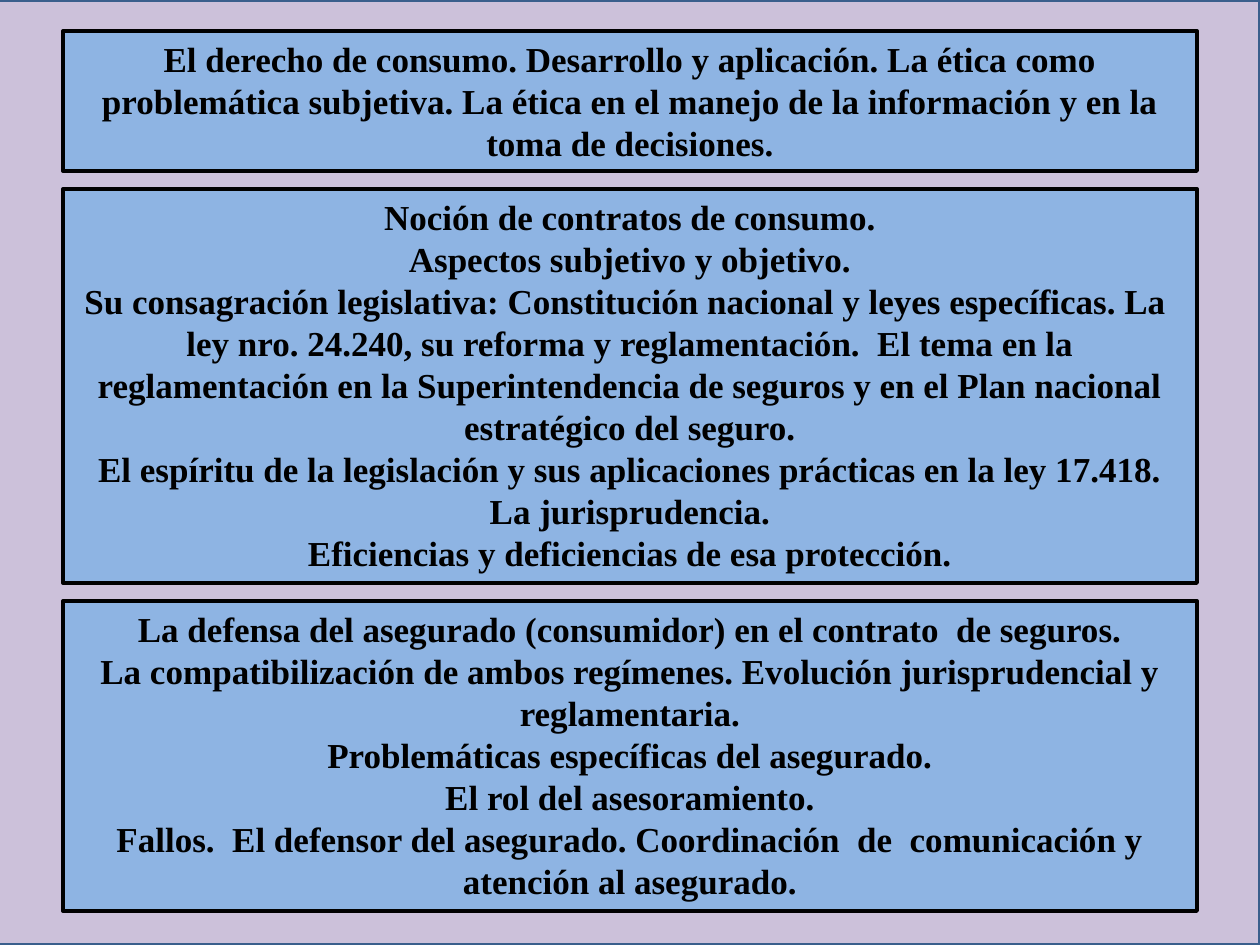
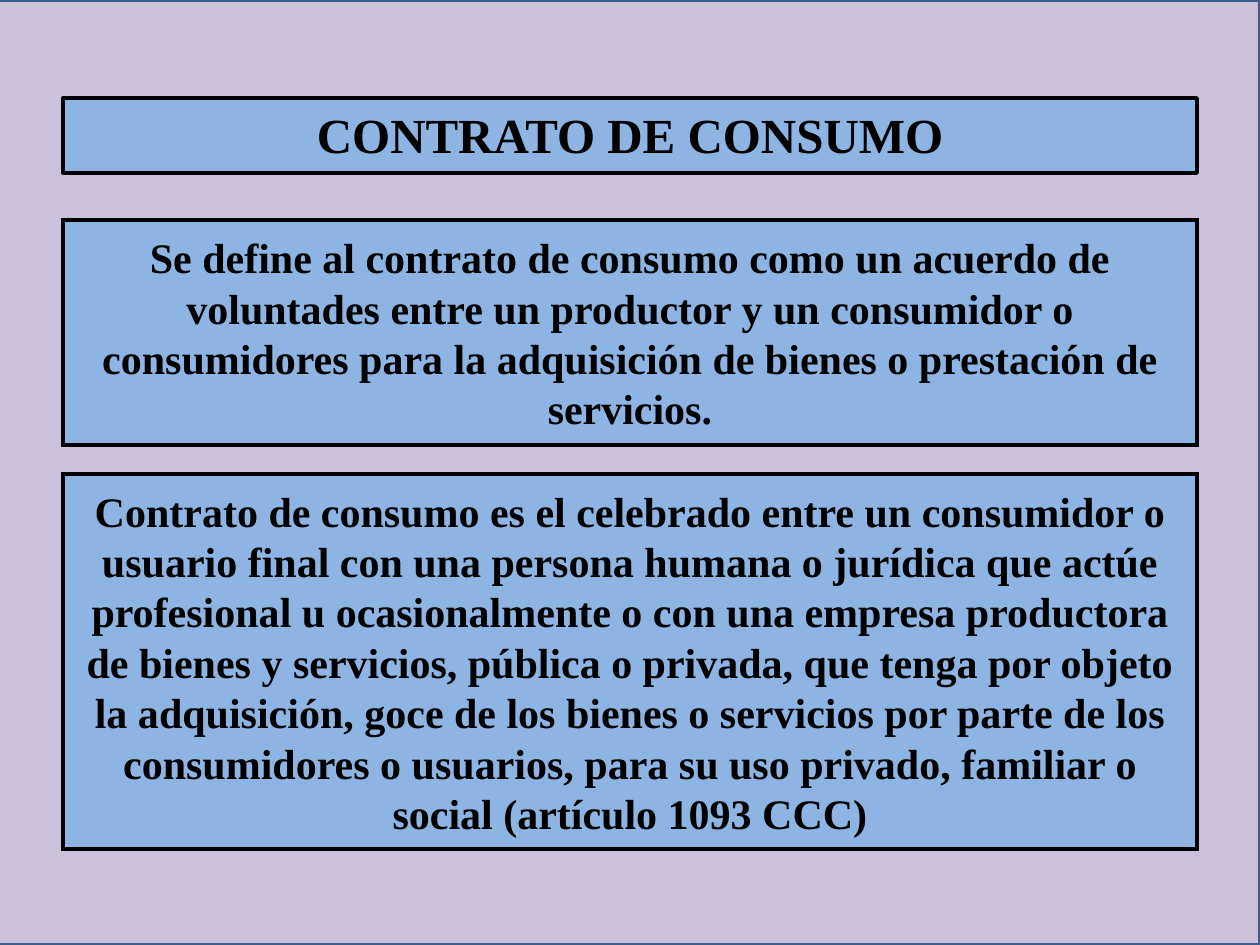
from lxml import etree
from pptx import Presentation
from pptx.dml.color import RGBColor
from pptx.enum import shapes, text
from pptx.oxml import ns
from pptx.util import Emu, Pt

SCALE = 914400 / 126  # EMU per px
WIDTH, HEIGHT = 1260, 945
MARGIN = 63
PANEL_WIDTH = WIDTH - 2 * MARGIN
FONT = "Times New Roman"
COLORS = {
    "backdrop": "CCC1DA",
    "backdrop_line": "3A5F8C",
    "panel": "8EB4E3",
    "ink": "000000",
}
TITLE_ONLY, BLANK = 5, 6

# Syllabus topics: panel height and its paragraphs
TOPICS = [
    (140, [
        "El derecho de consumo. Desarrollo y aplicación. La ética como problemática "
        "subjetiva. La ética en el manejo de la información y en la toma de decisiones.",
    ]),
    (394, [
        "Noción de contratos de consumo.",
        "Aspectos subjetivo y objetivo.",
        "Su consagración legislativa: Constitución nacional y leyes específicas. La  ley "
        "nro. 24.240, su reforma y reglamentación.  El tema en la reglamentación en la "
        "Superintendencia de seguros y en el Plan nacional estratégico del seguro.",
        "El espíritu de la legislación y sus aplicaciones prácticas en la ley 17.418. "
        "La jurisprudencia.",
        "Eficiencias y deficiencias de esa protección.",
    ]),
    (310, [
        "La defensa del asegurado (consumidor) en el contrato  de seguros.",
        "La compatibilización de ambos regímenes. Evolución jurisprudencial y "
        "reglamentaria.",
        "Problemáticas específicas del asegurado.",
        "El rol del asesoramiento.",
        "Fallos.  El defensor del asegurado. Coordinación  de  comunicación y atención "
        "al asegurado.",
    ]),
]

# Definitions of the contract: panel height and its paragraph
DEFINITIONS = [
    (225, [
        "Se define al contrato de consumo como un acuerdo de voluntades entre un "
        "productor y un consumidor o consumidores para la adquisición de bienes o "
        "prestación de servicios.",
    ]),
    (375, [
        "Contrato de consumo es el celebrado entre un consumidor o usuario final con una "
        "persona humana o jurídica que actúe profesional u ocasionalmente o con una "
        "empresa productora de bienes y servicios, pública o privada, que tenga por "
        "objeto la adquisición, goce de los bienes o servicios por parte de los "
        "consumidores o usuarios, para su uso privado, familiar o social (artículo 1093 "
        "CCC)",
    ]),
]


def px(length):
    return Emu(round(length * SCALE))


def color(name):
    return RGBColor.from_string(COLORS[name])


def style_box(shape, fill, line, line_width, mitered=False):
    shape.fill.solid()
    shape.fill.fore_color.rgb = color(fill)
    shape.line.color.rgb = color(line)
    shape.line.width = Pt(line_width)
    if mitered:
        outline = shape.element.spPr.find(ns.qn("a:ln"))
        etree.SubElement(outline, ns.qn("a:miter"), lim="800000")


def write_text(shape, paragraphs, size, anchor=text.MSO_ANCHOR.TOP):
    frame = shape.text_frame
    frame.word_wrap = True
    frame.auto_size = text.MSO_AUTO_SIZE.NONE
    frame.vertical_anchor = anchor
    frame.text = "\n".join(paragraphs)
    for paragraph in frame.paragraphs:
        paragraph.alignment = text.PP_ALIGN.CENTER
        font = paragraph.runs[0].font
        font.name, font.size, font.bold = FONT, Pt(size), True
        font.color.rgb = color("ink")


def add_rectangle(slide, left, top, width, height):
    shape = slide.shapes.add_shape(
        shapes.MSO_SHAPE.RECTANGLE, px(left), px(top), px(width), px(height))
    shape.shadow.inherit = False
    return shape


def add_backdrop(slide):
    backdrop = add_rectangle(slide, -10, 0, WIDTH + 10, HEIGHT)
    style_box(backdrop, "backdrop", "backdrop_line", 2, mitered=True)
    return backdrop


def add_panels(slide, top, gap, panels, size, anchor=text.MSO_ANCHOR.TOP, mitered=False):
    """Stack full-width text panels downwards from top with equal gaps."""
    for height, paragraphs in panels:
        panel = add_rectangle(slide, MARGIN, top, PANEL_WIDTH, height)
        style_box(panel, "panel", "ink", 2.25, mitered)
        write_text(panel, paragraphs, size, anchor)
        top += height + gap


def place_title(slide, title_text, top, height, backdrop):
    title = slide.shapes.title
    title.left, title.top = px(MARGIN), px(top)
    title.width, title.height = px(PANEL_WIDTH), px(height)
    style_box(title, "panel", "ink", 2.25)
    write_text(title, [title_text], 28)
    # Keep the backdrop behind the title placeholder
    title.element.addprevious(backdrop.element)


def build_topics_slide(presentation):
    slide = presentation.slides.add_slide(presentation.slide_layouts[BLANK])
    add_backdrop(slide)
    add_panels(slide, 31, 18, TOPICS, 20)


def build_definition_slide(presentation):
    slide = presentation.slides.add_slide(presentation.slide_layouts[TITLE_ONLY])
    backdrop = add_backdrop(slide)
    place_title(slide, "CONTRATO DE CONSUMO", 98, 75, backdrop)
    add_panels(slide, 220, 29, DEFINITIONS, 24, text.MSO_ANCHOR.MIDDLE, mitered=True)


def main():
    presentation = Presentation()
    presentation.slide_width, presentation.slide_height = px(WIDTH), px(HEIGHT)
    build_topics_slide(presentation)
    build_definition_slide(presentation)
    presentation.save("out.pptx")


if __name__ == "__main__":
    main()
